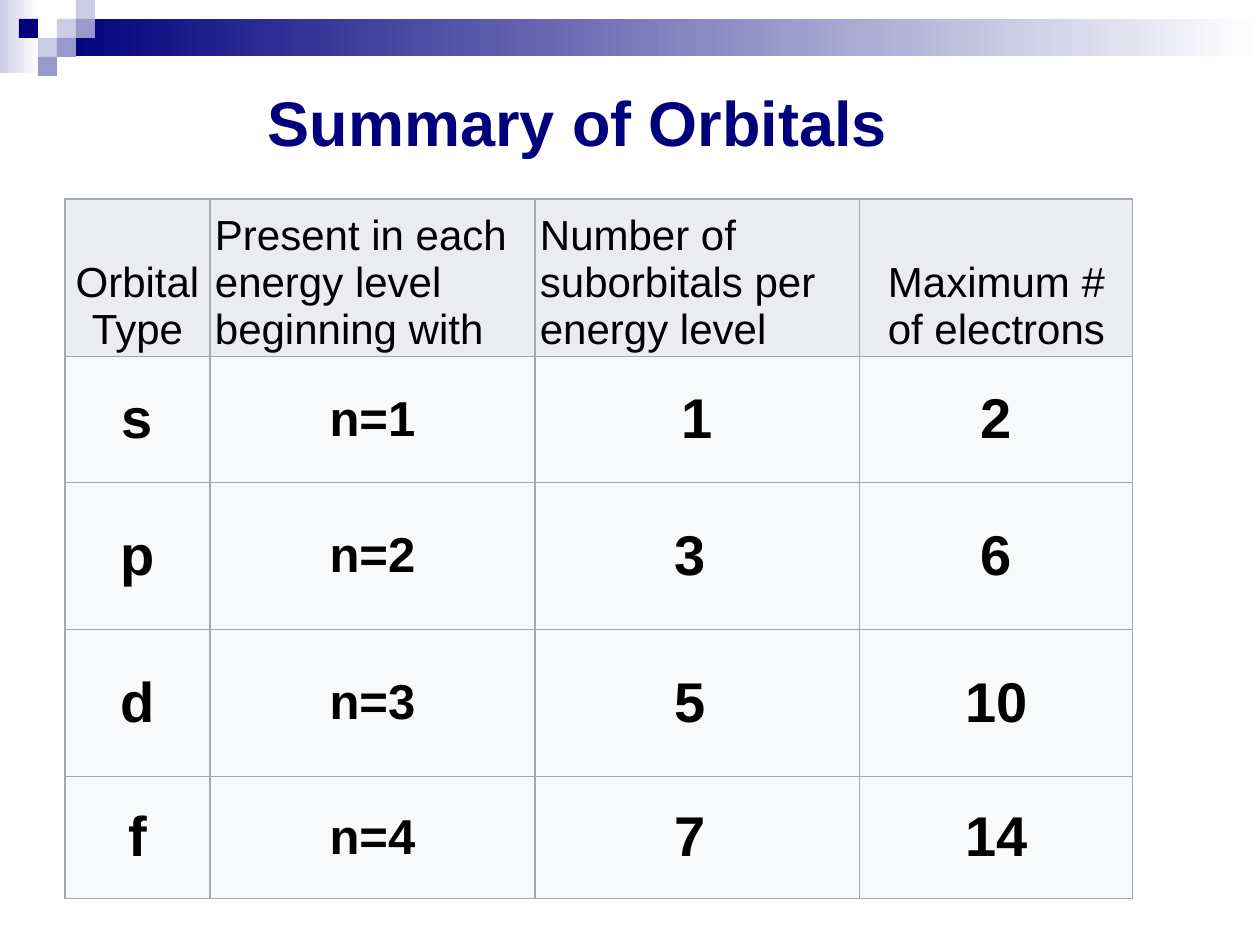
from lxml import etree
from pptx import Presentation
from pptx import util as u
from pptx.dml.color import RGBColor
from pptx.enum import shapes, text
from pptx.oxml.ns import qn

COLORS = {
    "navy": "00007D", "mid": "9999CC", "pale": "CCCCE6", "white": "FFFFFF",
    "black": "000000", "head": "EAECF0", "body": "F8F9FA", "border": "A2A9B1",
}
CENTER, LEFT = text.PP_ALIGN.CENTER, text.PP_ALIGN.LEFT
MIDDLE, BOTTOM = text.MSO_ANCHOR.MIDDLE, text.MSO_ANCHOR.BOTTOM


def px(n):
    return u.Emu(round(n * 914400 / 126))


def rgb(name):
    return RGBColor.from_string(COLORS[name])


class Deck:
    font = "Arial"

    def __init__(self, width, height):
        self.prs = Presentation()
        self.prs.slide_width, self.prs.slide_height = px(width), px(height)
        self.s = self.prs.slides.add_slide(self.prs.slide_layouts[6])

    def rect(self, x, y, w, h, *colors):
        """One colour gives a solid fill, two a left-to-right gradient."""
        sp = self.s.shapes.add_shape(
            shapes.MSO_SHAPE.RECTANGLE, px(x), px(y), px(w), px(h))
        sp.shadow.inherit = False
        sp.line.fill.background()
        if len(colors) == 1:
            sp.fill.solid()
            sp.fill.fore_color.rgb = rgb(colors[0])
        else:
            sp.fill.gradient()
            sp.fill.gradient_angle = 0
            for stop, color in zip(sp.fill.gradient_stops, colors):
                stop.color.rgb = rgb(color)

    def add_text(self, tf, words, size, color="black", bold=False,
                 align=CENTER):
        p = tf.paragraphs[0]
        p.alignment = align
        r = p.add_run()
        r.text = words
        r.font.name, r.font.size, r.font.bold = self.font, u.Pt(size), bold
        r.font.color.rgb = rgb(color)

    def title(self, x, y, w, h, words):
        tf = self.s.shapes.add_textbox(px(x), px(y), px(w), px(h)).text_frame
        tf.word_wrap = True
        tf.vertical_anchor = MIDDLE
        self.add_text(tf, words, 36, "navy", bold=True)

    def table(self, x, y, widths, heights):
        table = self.s.shapes.add_table(
            len(heights), len(widths), px(x), px(y),
            px(sum(widths)), px(sum(heights))).table
        for col, w in zip(table.columns, widths):
            col.width = px(w)
        for row, h in zip(table.rows, heights):
            row.height = px(h)
        return table

    def cell(self, cell, words, size, fill, anchor, **style):
        cell.margin_left = cell.margin_right = px(5)
        cell.margin_top = cell.margin_bottom = px(3)
        cell.vertical_anchor = anchor
        self.add_text(cell.text_frame, words, size, **style)
        # Borders go before the fill in the cell properties
        tc_pr = cell._tc.get_or_add_tcPr()
        for side in ("lnL", "lnR", "lnT", "lnB"):
            ln = etree.SubElement(tc_pr, qn("a:" + side), w=str(u.Pt(0.75)))
            solid = etree.SubElement(ln, qn("a:solidFill"))
            etree.SubElement(solid, qn("a:srgbClr"), val=COLORS["border"])
        cell.fill.solid()
        cell.fill.fore_color.rgb = rgb(fill)


def main():
    deck = Deck(1260, 945)

    # Banner with a mosaic of squares
    deck.rect(0, 0, 39, 73, "pale", "white")
    deck.rect(57, 19, 1203, 37, "navy", "white")
    side = 19
    for col, row, color in [(3, 1, "pale"), (4, 0, "pale"), (4, 1, "mid"),
                            (2, 2, "pale"), (1, 1, "navy"), (3, 2, "mid"),
                            (2, 3, "mid")]:
        deck.rect(col * side, row * side, side, side, color)

    deck.title(63, 63, 1029, 116, "Summary of Orbitals")

    # Orbital table
    table = deck.table(65, 199, [145, 325, 325, 273],
                       [146, 126, 147, 147, 122])
    headers = [("Orbital Type", CENTER),
               ("Present in each energy level beginning with", LEFT),
               ("Number of suborbitals per energy level", LEFT),
               ("Maximum # of electrons", CENTER)]
    for c, (words, align) in enumerate(headers):
        deck.cell(table.cell(0, c), words, 24, "head", BOTTOM, align=align)

    orbitals = [("s", "n=1", "1", "2"), ("p", "n=2", "3 ", "6"),
                ("d", "n=3", "5 ", "10"), ("f", "n=4", "7 ", "14")]
    sizes = [32, 28, 32, 32]
    for r, orbital in enumerate(orbitals, 1):
        for c, (words, size) in enumerate(zip(orbital, sizes)):
            deck.cell(table.cell(r, c), words, size, "body", MIDDLE, bold=True)

    deck.prs.save("out.pptx")


if __name__ == "__main__":
    main()
